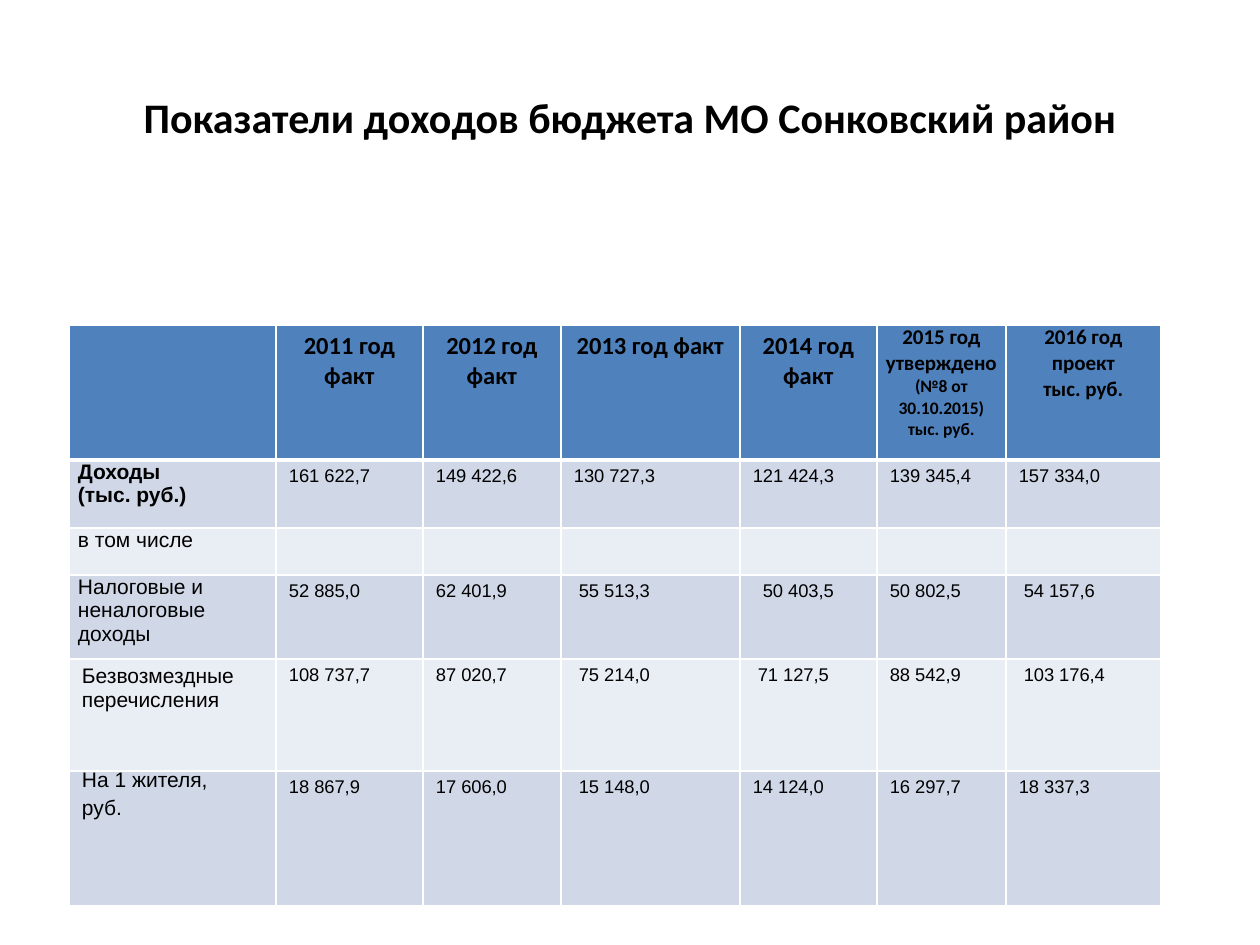
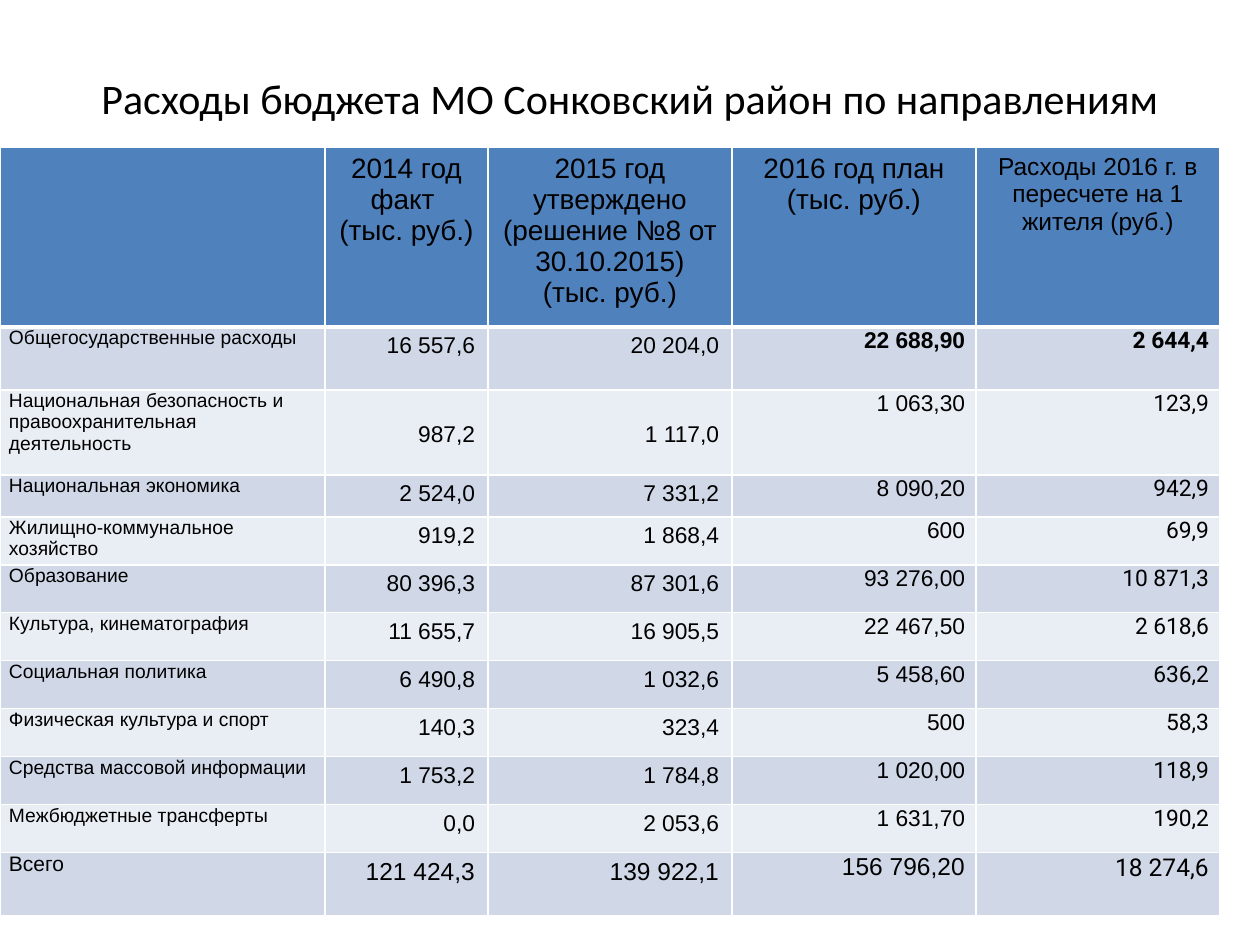
from dataclasses import dataclass, replace

from lxml.etree import SubElement
from pptx import Presentation
from pptx.dml.color import RGBColor
from pptx.enum.text import MSO_ANCHOR, PP_ALIGN
from pptx.oxml.ns import qn
from pptx.util import Emu, Pt

EMU_PER_PX = 914400 / 126
COLORS = {"text": "000000", "header": "4F81BD", "odd": "D0D8E8",
          "even": "E9EDF4", "border": "FFFFFF"}
WIDE, NARROW, TIGHT_RIGHT = (13, 6, 13, 6), (9, 0, 9, 0), (1, 1, 11, 0)
SPACE_WIDTH = 5
LINE_HEIGHT = 26


@dataclass(frozen=True)
class Look:
    """Text and inset settings of a title or cell."""
    size: float
    font: str = "Arial"
    bold: bool = False
    align: PP_ALIGN = PP_ALIGN.LEFT
    insets: tuple = WIDE
    spacing: float = 1.0
    gap: int = 0


INCOME_HEAD = Look(14, "Calibri", True, PP_ALIGN.CENTER)
INCOME_HEAD_SMALL = replace(INCOME_HEAD, size=12, insets=NARROW)
INCOME_LABEL = Look(12, insets=NARROW)
INCOME_TOTAL = Look(14 - 2, bold=True, align=PP_ALIGN.JUSTIFY, insets=NARROW)
INCOME_NUMBER = Look(10.5)
SPENDING_HEAD = Look(16, align=PP_ALIGN.CENTER)
SPENDING_LABEL = Look(11, insets=NARROW)
SPENDING_NUMBER = Look(13, align=PP_ALIGN.RIGHT)

INCOME_HEADERS = [
    ([], INCOME_HEAD_SMALL),
    *[([f"{year} год факт"], INCOME_HEAD) for year in range(2011, 2015)],
    ([[("2015 год утверждено ", 12), ("(№8 от 30.10.2015)", 10)], [("тыс. руб.", 10)]],
     INCOME_HEAD_SMALL),
    (["2016 год проект\nтыс. руб."], INCOME_HEAD_SMALL),
]
INCOME_ROWS = [
    (["Доходы ", "(тыс. руб.)"], INCOME_TOTAL,
     ["161 622,7", "149 422,6", "130 727,3", "121 424,3", "139 345,4", "157 334,0"]),
    (["в том числе"], replace(INCOME_LABEL, align=PP_ALIGN.JUSTIFY), [""] * 6),
    (["Налоговые и \nненалоговые доходы"], INCOME_LABEL,
     ["52 885,0", "62 401,9", "55 513,3", "50 403,5", "50 802,5", "54 157,6"]),
    (["Безвозмездные \nперечисления"], replace(INCOME_LABEL, insets=WIDE),
     ["108 737,7", "87 020,7", "75 214,0", "71 127,5", "88 542,9", "103 176,4"]),
    (["На 1 жителя,", "руб."], replace(INCOME_LABEL, insets=WIDE, spacing=0.58, gap=8),
     ["18 867,9", "17 606,0", "15 148,0", "14 124,0", "16 297,7", "18 337,3"]),
]
INCOME_INDENTS = {(2, 2): 1, (2, 3): 2, (2, 5): 1, (3, 2): 1, (3, 3): 1, (3, 5): 1, (4, 2): 1}

SPENDING_HEADERS = [
    ([], SPENDING_HEAD),
    (["2014 год факт ", "(тыс. руб.)"], SPENDING_HEAD),
    (["2015 год утверждено", "(решение №8 от 30.10.2015)", "(тыс. руб.)"], SPENDING_HEAD),
    (["2016 год план", "(тыс. руб.)"], SPENDING_HEAD),
    (["Расходы 2016 г. в пересчете на 1 жителя (руб.)"], replace(SPENDING_HEAD, size=14)),
]
SPENDING_ROWS = [
    ("Общегосударственные расходы", "16 557,6", "20 204,0", "22 688,90", "2 644,4"),
    ("Национальная безопасность и правоохранительная деятельность",
     "987,2", "1 117,0", "1 063,30", "123,9"),
    ("Национальная экономика", "2 524,0", "7 331,2", "8 090,20", "942,9"),
    ("Жилищно-коммунальное хозяйство", "919,2", "1 868,4", "600", "69,9"),
    ("Образование", "80 396,3", "87 301,6", "93 276,00", "10 871,3"),
    ("Культура, кинематография", "11 655,7", "16 905,5", "22 467,50", "2 618,6"),
    ("Социальная политика", "6 490,8", "1 032,6", "5 458,60", "636,2"),
    ("Физическая культура и спорт", "140,3", "323,4", "500", "58,3"),
    ("Средства массовой информации", "1 753,2", "1 784,8", "1 020,00", "118,9"),
    ("Межбюджетные трансферты", "0,0", "2 053,6", "1 631,70", "190,2"),
    ("Всего", "121 424,3", "139 922,1", "156 796,20", "18 274,6"),
]


def px(length):
    """Turn px into EMU."""
    return Emu(round(length * EMU_PER_PX))


def write(frame, paragraphs, look):
    """Write paragraphs, given as strings or as lists of (text, size) runs."""
    frame.word_wrap = True
    for index, content in enumerate(paragraphs):
        paragraph = frame.add_paragraph() if index else frame.paragraphs[0]
        paragraph.alignment = look.align
        if look.spacing != 1:
            paragraph.line_spacing = look.spacing
        if index and look.gap:
            paragraph.space_before = Pt(look.gap)
        runs = [(content, look.size)] if isinstance(content, str) else content
        for text, size in runs:
            for line_index, line in enumerate(text.split("\n")):
                if line_index:
                    paragraph.add_line_break()
                run = paragraph.add_run()
                run.text = line
                run.font.name = look.font
                run.font.size = Pt(size)
                run.font.bold = look.bold
                run.font.color.rgb = RGBColor.from_string(COLORS["text"])


def add_title(slide, box, text, bold):
    """Place the centred slide title."""
    title = slide.shapes.add_textbox(*map(px, box))
    title.text_frame.vertical_anchor = MSO_ANCHOR.MIDDLE
    write(title.text_frame, [text], Look(24, "Calibri", bold, PP_ALIGN.CENTER))


def add_borders(cell, top, bottom):
    """Draw white borders, with top and bottom widths in points."""
    properties = cell._tc.get_or_add_tcPr()
    for side, width in (("L", 1), ("R", 1), ("T", top), ("B", bottom)):
        line = SubElement(properties, qn(f"a:ln{side}"), w=str(Pt(width)))
        SubElement(SubElement(line, qn("a:solidFill")), qn("a:srgbClr"), val=COLORS["border"])


def add_budget_table(slide, origin, widths, heights, rows):
    """Place a banded table of (paragraphs, look) cells at its top left corner."""
    box = (*origin, sum(widths), sum(heights))
    table = slide.shapes.add_table(len(heights), len(widths), *map(px, box)).table
    table.first_row = table.horz_banding = False
    for column, width in zip(table.columns, widths):
        column.width = px(width)
    for row_index, (row, height, cells) in enumerate(zip(table.rows, heights, rows)):
        row.height = px(height)
        band = "header" if row_index == 0 else "odd" if row_index % 2 else "even"
        for cell, (paragraphs, look) in zip(row.cells, cells):
            insets = look.insets if paragraphs else NARROW
            (cell.margin_left, cell.margin_top,
             cell.margin_right, cell.margin_bottom) = map(px, insets)
            add_borders(cell, 3 if row_index == 1 else 1, 3 if row_index == 0 else 1)
            cell.fill.solid()
            cell.fill.fore_color.rgb = RGBColor.from_string(COLORS[band])
            write(cell.text_frame, paragraphs, look)


def income_cells(row_index, label, label_look, numbers):
    """Pair the texts of an income row with their looks."""
    cells = [(label, label_look)]
    for column, number in enumerate(numbers):
        left, *others = WIDE
        left += SPACE_WIDTH * INCOME_INDENTS.get((row_index, column), 0)
        cells.append(([number] if number else [], replace(INCOME_NUMBER, insets=(left, *others))))
    return cells


def spending_cells(row_index, label, fact, approved, plan, per_resident):
    """Pair the texts of a spending row with their looks."""
    is_total = row_index == len(SPENDING_ROWS) - 1
    label_look = replace(SPENDING_LABEL, size=12 if is_total else 11)
    number_look = replace(SPENDING_NUMBER, size=14 if is_total else 13)
    plan_look = replace(number_look, insets=TIGHT_RIGHT, bold=row_index == 0)
    if row_index == 1:
        left, top, right, bottom = WIDE
        number_look = replace(number_look, insets=(left, top + LINE_HEIGHT, right, bottom))
    return [([label], label_look), ([fact], number_look), ([approved], number_look),
            ([plan], plan_look), ([per_resident], replace(plan_look, font="Roboto"))]


def build_income_slide(slide):
    """Build the slide of budget income."""
    add_title(slide, (63, 38, 1134, 157), "Показатели доходов бюджета МО Сонковский район", True)
    rows = [income_cells(index, *row) for index, row in enumerate(INCOME_ROWS)]
    add_budget_table(slide, (69, 325), [207, 147, 138, 179, 137, 129, 155],
                     [135, 68, 47, 84, 112, 135], [INCOME_HEADERS, *rows])


def build_spending_slide(slide):
    """Build the slide of budget spending."""
    add_title(slide, (63, 38, 1134, 120),
              "Расходы бюджета МО Сонковский район по направлениям", False)
    rows = [spending_cells(index, *row) for index, row in enumerate(SPENDING_ROWS)]
    add_budget_table(slide, (0, 147), [325, 163, *[244] * 3],
                     [177, 63, 85, 42, *[48] * 7, 63], [SPENDING_HEADERS, *rows])


def main():
    """Build and save the presentation."""
    presentation = Presentation()
    presentation.slide_width, presentation.slide_height = px(1260), px(945)
    for build in (build_income_slide, build_spending_slide):
        build(presentation.slides.add_slide(presentation.slide_layouts[6]))
    presentation.save("out.pptx")


if __name__ == "__main__":
    main()
